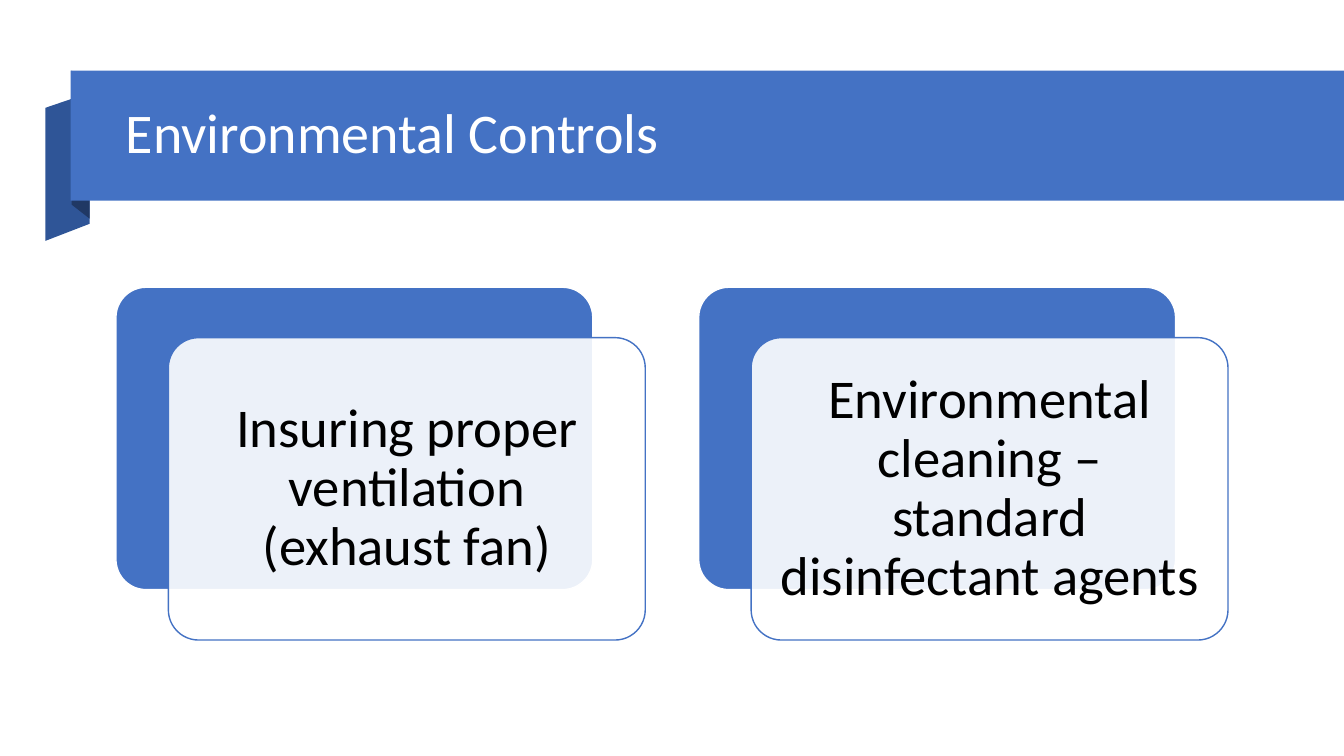
import pptx
import pptx.util
import pptx.dml.color
import pptx.enum.shapes
import pptx.enum.text
import pptx.oxml
import pptx.oxml.ns
from pptx.util import Inches

THEME = {
    "font": "Calibri",
    "blue": "4472C4",
    "ribbon": "2F5597",
    "fold": "203864",
    "white": "FFFFFF",
    "black": "000000",
    "title_size": 40,
    "card_size": 39,
}
SHAPES = pptx.enum.shapes.MSO_SHAPE
ALIGN = pptx.enum.text.PP_ALIGN

presentation = pptx.Presentation()
presentation.slide_width = Inches(13.33)
presentation.slide_height = Inches(7.5)
slide = presentation.slides.add_slide(presentation.slide_layouts[6])


def style_shape(shape, fill, line=None):
    shape.shadow.inherit = False
    shape.fill.solid()
    shape.fill.fore_color.rgb = pptx.dml.color.RGBColor.from_string(THEME[fill])
    if line is None:
        shape.line.fill.background()
    else:
        shape.line.color.rgb = pptx.dml.color.RGBColor.from_string(THEME[line])
        shape.line.width = pptx.util.Pt(1)


def add_text(box, text, size, color, alignment, inset):
    left, top, width, height = box
    text_box = slide.shapes.add_textbox(Inches(left), Inches(top), Inches(width), Inches(height))
    frame = text_box.text_frame
    frame.word_wrap = True
    frame.vertical_anchor = pptx.enum.text.MSO_ANCHOR.MIDDLE
    frame.margin_left = frame.margin_right = Inches(inset)
    frame.margin_top = frame.margin_bottom = Inches(inset)
    paragraph = frame.paragraphs[0]
    paragraph.alignment = alignment
    paragraph.line_spacing = 0.9
    run = paragraph.add_run()
    run.text = text
    run.font.name = THEME["font"]
    run.font.size = pptx.util.Pt(THEME[size])
    run.font.color.rgb = pptx.dml.color.RGBColor.from_string(THEME[color])


ribbon_parts = [
    ("ribbon", [(0.89, 2.22), (0.45, 2.39), (0.45, 1.07), (0.89, 0.92)]),
    ("fold", [(0.89, 2.17), (0.71, 2.03), (0.71, 0.7), (0.89, 0.85)]),
]
for fill, points in ribbon_parts:
    corners = [(Inches(x), Inches(y)) for x, y in points]
    builder = slide.shapes.build_freeform(*corners[0], scale=1.0)
    builder.add_line_segments(corners[1:], close=True)
    style_shape(builder.convert_to_shape(), fill)

banner = slide.shapes.add_shape(
    SHAPES.RECTANGLE, Inches(0.7), Inches(0.7), Inches(12.63), Inches(1.29)
)
style_shape(banner, "blue")
add_text((1.15, 0.86, 11.27, 0.96), "Environmental Controls", "title_size", "white", ALIGN.LEFT, 0.1)

CARD_LEFT, CARD_TOP, CARD_PITCH = 1.15, 2.85, 5.78
CARD_WIDTH, CARD_HEIGHT = 4.73, 3
OFFSET_X, OFFSET_Y, TEXT_INSET = 0.52, 0.5, 0.09
controls = [
    "Insuring proper ventilation (exhaust fan)",
    "Environmental cleaning – standard disinfectant agents",
]
for index, control in enumerate(controls):
    back_left = CARD_LEFT + index * CARD_PITCH
    front_left, front_top = back_left + OFFSET_X, CARD_TOP + OFFSET_Y
    layers = [
        (back_left, CARD_TOP, "blue", "white"),
        (front_left, front_top, "white", "blue"),
    ]
    for left, top, fill, line in layers:
        card = slide.shapes.add_shape(
            SHAPES.ROUNDED_RECTANGLE,
            Inches(left), Inches(top), Inches(CARD_WIDTH), Inches(CARD_HEIGHT),
        )
        card.adjustments[0] = 0.1
        style_shape(card, fill, line)
    front_color = card.fill._xPr.find(pptx.oxml.ns.qn("a:solidFill"))[0]
    alpha = pptx.oxml.parse_xml(
        f'<a:alpha {pptx.oxml.ns.nsdecls("a")} val="90000"/>'
    )
    front_color.append(alpha)
    text_area = (
        front_left + TEXT_INSET,
        front_top + TEXT_INSET,
        CARD_WIDTH - 2 * TEXT_INSET,
        CARD_HEIGHT - 2 * TEXT_INSET,
    )
    add_text(text_area, control, "card_size", "black", ALIGN.CENTER, 0.17)

presentation.save("out.pptx")
